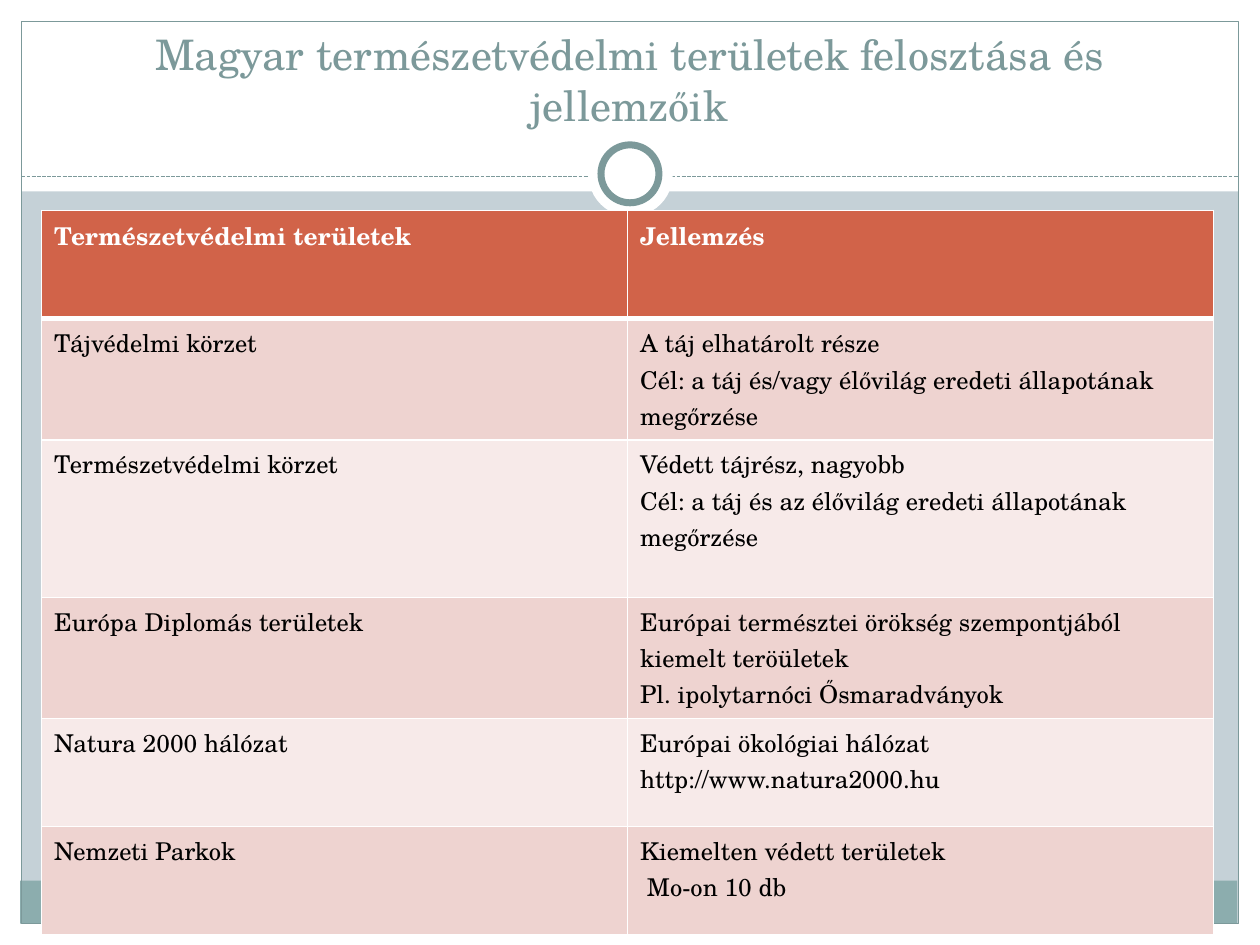
from lxml.etree import SubElement
from pptx import Presentation
from pptx.dml.color import RGBColor
from pptx.enum.dml import MSO_LINE
from pptx.enum.shapes import MSO_CONNECTOR, MSO_SHAPE
from pptx.enum.text import MSO_ANCHOR, MSO_AUTO_SIZE, PP_ALIGN
from pptx.oxml.ns import qn
from pptx.util import Inches, Pt

FONT = "TeX Gyre Schola"
WHITE, BLACK = "FFFFFF", "000000"
BACKGROUND, TEAL, FOOTER = "C5D1D7", "7C999A", "8CADAE"
HEADER, BANDS = "D16349", ("EED3D0", "F7EAE9")

TITLE = "Magyar természetvédelmi területek felosztása és jellemzőik"
ROWS = [
    ("Természetvédelmi területek", "Jellemzés"),
    ("Tájvédelmi körzet",
     "A táj elhatárolt része\n"
     "Cél: a táj és/vagy élővilág eredeti állapotának megőrzése"),
    ("Természetvédelmi körzet",
     "Védett tájrész, nagyobb\n"
     "Cél: a táj és az élővilág eredeti állapotának megőrzése"),
    ("Európa Diplomás területek",
     "Európai természtei örökség szempontjából kiemelt teröületek\n"
     "Pl. ipolytarnóci Ősmaradványok"),
    ("Natura 2000 hálózat", "Európai ökológiai hálózat\nhttp://www.natura2000.hu"),
    ("Nemzeti Parkok", "Kiemelten védett területek\n Mo-on 10 db"),
]
ROW_HEIGHTS = (0.86, 0.96, 1.25, 0.96, 0.86, 0.86)


def color(hex_string):
    return RGBColor.from_string(hex_string)


def set_font(paragraph, size, hex_string, bold=False):
    font = paragraph.font
    font.name, font.size, font.bold = FONT, Pt(size), bold
    font.color.rgb = color(hex_string)


def add_panel(slide, box, fill=None, line=None, width=0.75, kind=MSO_SHAPE.RECTANGLE):
    shape = slide.shapes.add_shape(kind, *map(Inches, box))
    shape.shadow.inherit = False
    if fill:
        shape.fill.solid()
        shape.fill.fore_color.rgb = color(fill)
    else:
        shape.fill.background()
    if line:
        shape.line.color.rgb = color(line)
        shape.line.width = Pt(width)
    else:
        shape.line.fill.background()


def add_dashed_line(slide, left, right, y):
    connector = slide.shapes.add_connector(
        MSO_CONNECTOR.STRAIGHT, Inches(left), Inches(y), Inches(right), Inches(y))
    connector.line.color.rgb = color(TEAL)
    connector.line.width = Pt(0.75)
    connector.line.dash_style = MSO_LINE.SQUARE_DOT
    SubElement(connector._element.spPr, qn("a:effectLst"))


def add_frame(slide):
    for box in ((0, 7.33, 10, 0.17), (0, 0, 10, 1.52),
                (0, 0, 0.17, 7.5), (9.83, 0, 0.17, 7.5)):
        add_panel(slide, box, WHITE)
    add_panel(slide, (0.16, 6.99, 9.66, 0.34), FOOTER)
    add_panel(slide, (0.17, 0.17, 9.66, 7.16), line=TEAL)
    add_dashed_line(slide, 0.17, 9.83, 1.4)
    add_panel(slide, (4.67, 1.05, 0.67, 0.67), WHITE, kind=MSO_SHAPE.OVAL)
    add_panel(slide, (4.77, 1.15, 0.46, 0.46), WHITE, TEAL, 4, MSO_SHAPE.OVAL)


def place_title(slide):
    """Fill the title placeholder and bring it in front of the frame."""
    title = slide.shapes.title
    title.left, title.top = Inches(0.33), Inches(0.25)
    title.width, title.height = Inches(9.33), Inches(0.83)
    frame = title.text_frame
    frame.text = TITLE
    frame.word_wrap = True
    frame.auto_size = MSO_AUTO_SIZE.NONE
    frame.vertical_anchor = MSO_ANCHOR.BOTTOM
    paragraph = frame.paragraphs[0]
    paragraph.alignment = PP_ALIGN.CENTER
    set_font(paragraph, 24, TEAL)
    slide.shapes._spTree.append(title._element)


def set_borders(cell, top, bottom):
    """Draw white cell borders; widths in points, sides always 1."""
    properties = cell._tc.get_or_add_tcPr()
    for index, (side, width) in enumerate(
            (("L", 1), ("R", 1), ("T", top), ("B", bottom))):
        line = SubElement(properties, qn(f"a:ln{side}"), w=str(Pt(width)))
        fill = SubElement(line, qn("a:solidFill"))
        SubElement(fill, qn("a:srgbClr"), val=WHITE)
        properties.insert(index, line)


def fill_cell(cell, text, row):
    is_header = row == 0
    cell.text = text
    cell.fill.solid()
    cell.fill.fore_color.rgb = color(HEADER if is_header else BANDS[(row - 1) % 2])
    for paragraph in cell.text_frame.paragraphs:
        set_font(paragraph, 14, WHITE if is_header else BLACK, is_header)
    set_borders(cell, top=3 if row == 1 else 1, bottom=3 if is_header else 1)


def add_areas_table(slide):
    table = slide.shapes.add_table(
        len(ROWS), 2, Inches(0.33), Inches(1.67),
        Inches(9.3), Inches(sum(ROW_HEIGHTS))).table
    for row, (texts, height) in enumerate(zip(ROWS, ROW_HEIGHTS)):
        table.rows[row].height = Inches(height)
        for column, text in enumerate(texts):
            fill_cell(table.cell(row, column), text, row)


def main():
    presentation = Presentation()
    presentation.slide_width, presentation.slide_height = Inches(10), Inches(7.5)
    slide = presentation.slides.add_slide(presentation.slide_layouts[5])
    slide.background.fill.solid()
    slide.background.fill.fore_color.rgb = color(BACKGROUND)
    add_frame(slide)
    place_title(slide)
    add_areas_table(slide)
    presentation.save("out.pptx")


if __name__ == "__main__":
    main()
